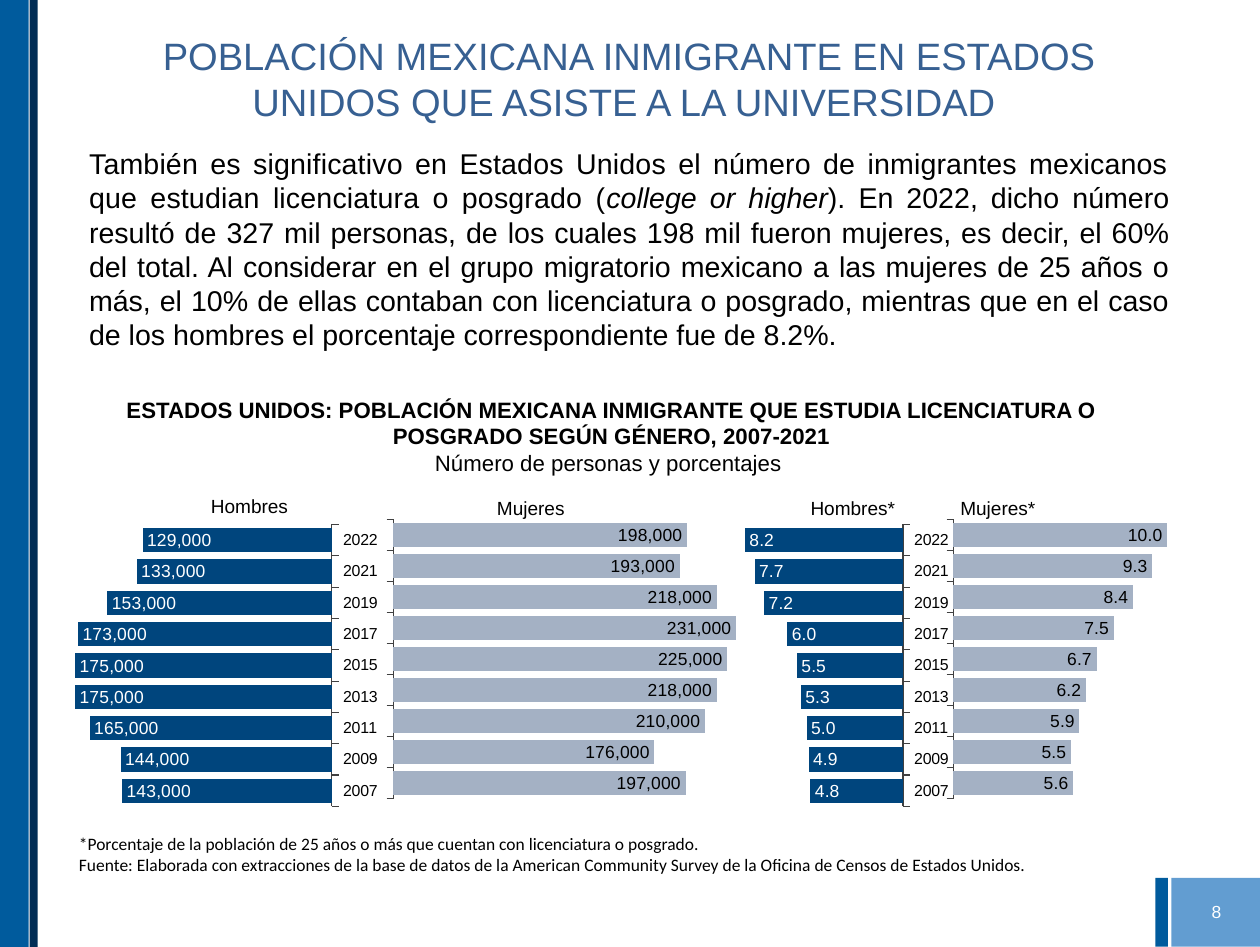
from dataclasses import dataclass

import pptx
import pptx.chart.data
import pptx.dml.color
import pptx.enum.chart
import pptx.enum.shapes
import pptx.enum.text
import pptx.oxml
import pptx.oxml.ns
import pptx.util

Pt = pptx.util.Pt
Align = pptx.enum.text.PP_ALIGN
Anchor = pptx.enum.text.MSO_ANCHOR
Box = tuple[float, float, float, float]


@dataclass(frozen=True)
class Theme:
    font: str = "Arial"
    note_font: str = "Calibri"
    black: str = "000000"
    white: str = "FFFFFF"
    title: str = "376092"
    sky: str = "629DD1"
    blue: str = "005B9D"
    navy: str = "012D55"
    men: str = "00457D"
    women: str = "A4B1C4"
    axis: str = "404040"
    title_size: float = 24
    body_size: float = 18
    heading_size: float = 14
    chart_title_size: float = 12
    small_size: float = 11
    axis_size: float = 10


@dataclass(frozen=True)
class Run:
    text: str
    bold: bool = False
    italic: bool = False
    spacing: int = 0


@dataclass(frozen=True)
class Bar:
    box: Box
    color: str


@dataclass(frozen=True)
class Pyramid:
    title: str
    left: float
    width: float
    title_at: tuple[float, float]
    plot: Box
    values: tuple[float, ...]
    maximum: float
    number_format: str
    men: bool


THEME = Theme()
SLIDE_WIDTH, SLIDE_HEIGHT = 793.75, 596.63
YEARS = ("2007", "2009", "2011", "2013", "2015", "2017", "2019", "2021", "2022")
CHART_TOP, CHART_HEIGHT = 298.6, 213.84
WIDE, NARROW = 261.36, 156.96
WOMEN_PLOT = (0.111, 0.134, 0.858, 0.823)

BARS = (
    Bar((738, 553, 55.75, 43.4), THEME.sky),
    Bar((727.8, 553, 7.92, 43.4), THEME.blue),
    Bar((18.7, 0, 5.04, SLIDE_HEIGHT), THEME.navy),
    Bar((0, 0, 18, SLIDE_HEIGHT), THEME.blue),
)

PYRAMIDS = (
    Pyramid("Hombres", -18, WIDE, (0.569, 0.05), (0.02, 0.149, 0.849, 0.831),
            (143000, 144000, 165000, 175000, 175000, 173000, 153000, 133000, 129000),
            240000, "#,##0", True),
    Pyramid("Mujeres", 218.88, WIDE, (0.352, 0.056), WOMEN_PLOT,
            (197000, 176000, 210000, 218000, 225000, 231000, 218000, 193000, 198000),
            240000, "#,##0", False),
    Pyramid("Hombres*", 444.24, NARROW, (0.409, 0.056), (0.02, 0.149, 0.774, 0.831),
            (4.8, 4.9, 5, 5.3, 5.5, 6, 7.2, 7.7, 8.2), 10, "#,##0.0", True),
    Pyramid("Mujeres*", 583.2, NARROW, (0.125, 0.056), WOMEN_PLOT,
            (5.6, 5.5, 5.9, 6.2, 6.7, 7.5, 8.4, 9.3, 10), 10, "#,##0.0", False),
)


def rgb(color: str) -> pptx.dml.color.RGBColor:
    return pptx.dml.color.RGBColor.from_string(color)


def style_font(font, size: float, color: str = THEME.black, name: str = THEME.font) -> None:
    font.name = name
    font.size = Pt(size)
    font.color.rgb = rgb(color)


def add_bar(s, bar: Bar) -> None:
    sp = s.shapes.add_shape(pptx.enum.shapes.MSO_SHAPE.RECTANGLE, *map(Pt, bar.box))
    sp.shadow.inherit = False
    sp.fill.solid()
    sp.fill.fore_color.rgb = rgb(bar.color)
    sp.line.fill.background()


def add_text(s, box: Box, paragraphs: list[list[Run]], *, size: float,
             color: str = THEME.black, font: str = THEME.font,
             align=Align.CENTER, anchor=Anchor.MIDDLE) -> None:
    tf = s.shapes.add_textbox(*map(Pt, box)).text_frame
    tf.word_wrap = True
    tf.vertical_anchor = anchor
    for i, runs in enumerate(paragraphs):
        p = tf.add_paragraph() if i else tf.paragraphs[0]
        p.alignment = align
        for run in runs:
            r = p.add_run()
            r.text = run.text
            style_font(r.font, size, color, font)
            r.font.bold = run.bold
            r.font.italic = run.italic
            if run.spacing:
                r._r.get_or_add_rPr().set("spc", str(run.spacing))


def set_layout(parent, index: int, values: dict[str, float], inner: bool = False) -> None:
    for old in parent.xpath("c:layout"):
        parent.remove(old)
    target = '<c:layoutTarget val="inner"/>' if inner else ""
    modes = "".join(f'<c:{k}Mode val="edge"/>' for k in ("x", "y"))
    places = "".join(f'<c:{k} val="{v}"/>' for k, v in values.items())
    parent.insert(index, pptx.oxml.parse_xml(
        f'<c:layout {pptx.oxml.ns.nsdecls("c")}><c:manualLayout>'
        f"{target}{modes}{places}</c:manualLayout></c:layout>"))


def add_pyramid(s, side: Pyramid) -> None:
    ec = pptx.enum.chart
    data = pptx.chart.data.CategoryChartData(number_format=side.number_format)
    data.categories = YEARS if side.men else [str(n + 1) for n in range(len(YEARS))]
    data.add_series(side.title, side.values)
    box = (side.left, CHART_TOP, side.width, CHART_HEIGHT)
    chart = s.shapes.add_chart(ec.XL_CHART_TYPE.BAR_CLUSTERED, *map(Pt, box), data).chart
    style_font(chart.font, THEME.axis_size)
    chart.has_legend = False
    chart.has_title = True
    r = chart.chart_title.text_frame.paragraphs[0].add_run()
    r.text = side.title
    style_font(r.font, THEME.chart_title_size)
    r.font.bold = False

    axis = chart.category_axis
    axis.major_tick_mark = ec.XL_TICK_MARK.OUTSIDE
    axis.minor_tick_mark = ec.XL_TICK_MARK.NONE
    axis.has_major_gridlines = False
    axis.format.line.color.rgb = rgb(THEME.axis)
    axis.format.line.width = Pt(0.75)
    style_font(axis.tick_labels.font, THEME.axis_size)
    if not side.men:
        axis.tick_label_position = ec.XL_TICK_LABEL_POSITION.NONE

    scale = chart.value_axis
    scale.minimum_scale, scale.maximum_scale = 0, side.maximum
    scale.has_major_gridlines = False
    scale.reverse_order = side.men
    scale.visible = False

    plot = chart.plots[0]
    plot.gap_width = 29
    plot.vary_by_categories = False
    fill = plot.series[0].format.fill
    fill.solid()
    fill.fore_color.rgb = rgb(THEME.men if side.men else THEME.women)
    plot.has_data_labels = True
    labels = plot.data_labels
    labels.show_value = True
    labels.number_format = side.number_format
    labels.number_format_is_linked = False
    labels.position = ec.XL_LABEL_POSITION.INSIDE_END
    style_font(labels.font, THEME.small_size, THEME.white if side.men else THEME.black)

    root = chart._chartSpace
    set_layout(root.xpath("c:chart/c:title")[0], 1, dict(zip("xy", side.title_at)))
    set_layout(root.xpath("c:chart/c:plotArea")[0], 0, dict(zip("xywh", side.plot)), inner=True)
    root.xpath("c:chart")[0].addnext(pptx.oxml.parse_xml(
        f'<c:spPr {pptx.oxml.ns.nsdecls("c", "a")}><a:noFill/><a:ln><a:noFill/></a:ln></c:spPr>'))


def main() -> None:
    prs = pptx.Presentation()
    prs.slide_width, prs.slide_height = Pt(SLIDE_WIDTH), Pt(SLIDE_HEIGHT)
    s = prs.slides.add_slide(prs.slide_layouts[6])
    for bar in BARS:
        add_bar(s, bar)
    add_text(s, (49, 16, 694.8, 66.24), [[Run(
        "POBLACIÓN MEXICANA INMIGRANTE EN ESTADOS UNIDOS QUE ASISTE A LA UNIVERSIDAD ")]],
        size=THEME.title_size, color=THEME.title)
    add_text(s, (49, 88.4, 694.8, 153.4), [[
        Run("También es significativo en Estados Unidos el número de inmigrantes mexicanos que "
            "estudian licenciatura o posgrado (", spacing=10),
        Run("college or higher", italic=True),
        Run("). En 2022, dicho número resultó de 327 mil personas, de los cuales 198 mil fueron "
            "mujeres, es decir, el 60% del total. Al considerar en el grupo migratorio mexicano a "
            "las mujeres de 25 años o más, el 10% de ellas contaban con licenciatura o posgrado, "
            "mientras que en el caso de los hombres el porcentaje correspondiente fue de 8.2%."),
    ]], size=THEME.body_size, align=Align.JUSTIFY, anchor=Anchor.TOP)
    add_text(s, (742.2, 558.5, 48.24, 31.68), [[Run("8")]],
             size=THEME.small_size, color=THEME.white)
    for side in PYRAMIDS:
        add_pyramid(s, side)
    add_text(s, (30.24, 244, 709.92, 61.2), [
        [Run("ESTADOS UNIDOS: POBLACIÓN MEXICANA INMIGRANTE QUE ESTUDIA LICENCIATURA O POSGRADO "
             "SEGÚN GÉNERO, 2007-2021", bold=True)],
        [Run("Número de personas y porcentajes ")]], size=THEME.heading_size)
    add_text(s, (42.6, 518.4, 697.68, 38.88), [
        [Run("*Porcentaje de la población de 25 años o más que cuentan con licenciatura o posgrado.")],
        [Run("Fuente: Elaborada con extracciones de la base de datos de la American Community "
             "Survey de la Oficina de Censos de Estados Unidos.")],
    ], size=THEME.small_size, font=THEME.note_font, align=Align.LEFT)
    prs.save("out.pptx")


if __name__ == "__main__":
    main()
